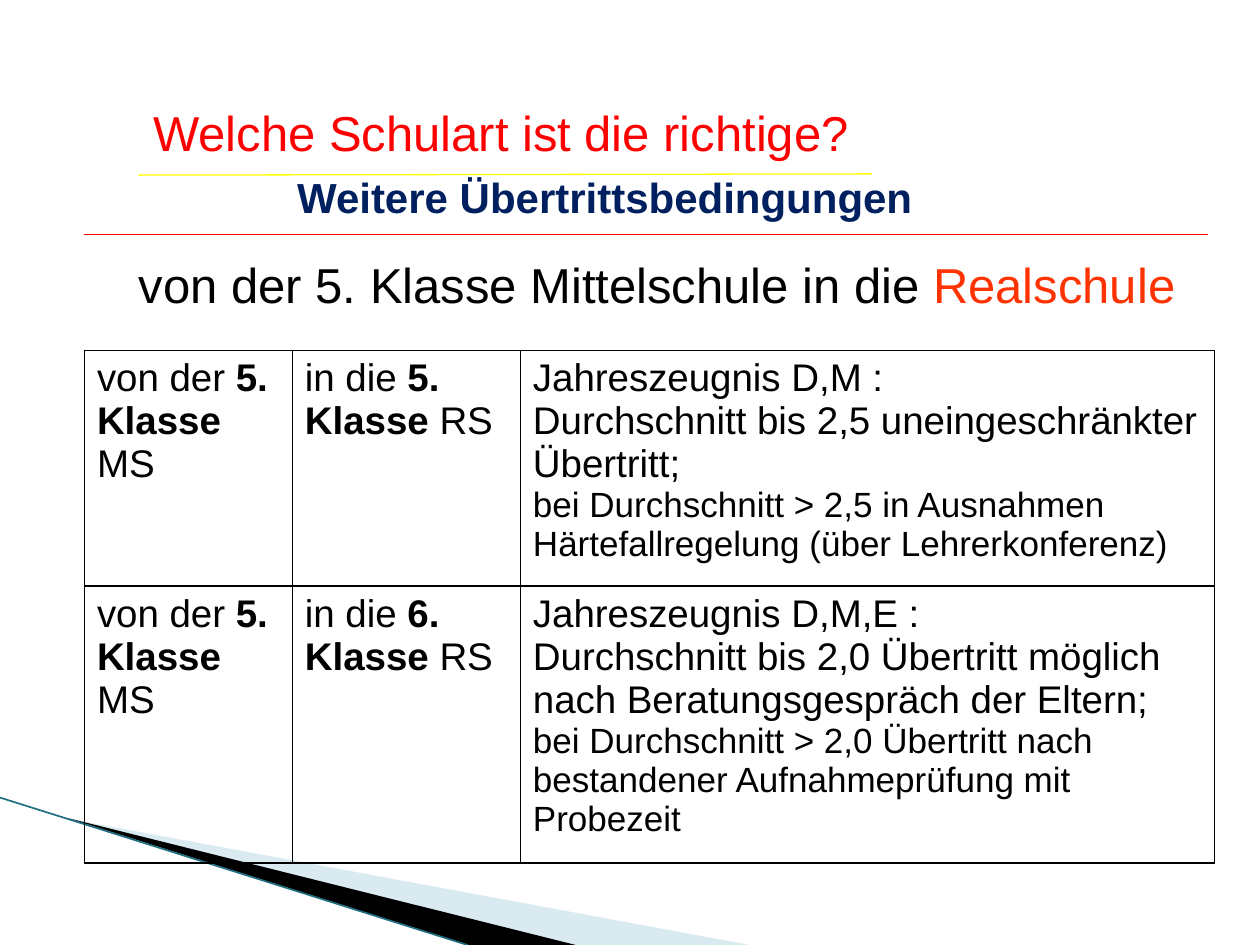
from dataclasses import dataclass

from lxml.etree import SubElement
from pptx import Presentation
from pptx.dml.color import RGBColor
from pptx.enum.shapes import MSO_CONNECTOR
from pptx.enum.text import MSO_ANCHOR, PP_ALIGN
from pptx.oxml import parse_xml
from pptx.oxml.ns import nsdecls, qn
from pptx.util import Inches, Pt


@dataclass(frozen=True)
class Theme:
    font: str = "Arial"
    black: str = "000000"
    red: str = "FF0000"
    orange: str = "FF3300"
    yellow: str = "FFFF00"
    navy: str = "002060"
    pale: str = "A0CBDC"
    teal: str = "1F6F80"
    heading: int = 28
    subheading: int = 24
    body: int = 22
    detail: int = 20


T = Theme()


def add_runs(p, runs, size, color=T.black, bold=False):
    """Each run is a text and a dict of what differs from the defaults."""
    for text, changes in runs:
        r = p.add_run()
        r.text = text
        look = {"name": T.font, "size": size, "bold": bold, "color": color} | changes
        r.font.color.rgb = RGBColor.from_string(look.pop("color"))
        look["size"] = Pt(look["size"])
        for name, value in look.items():
            setattr(r.font, name, value)


def format_heading(sp, box, runs, **look):
    sp.left, sp.top, sp.width, sp.height = map(Inches, box)
    tf = sp.text_frame
    frame = {"word_wrap": True, "vertical_anchor": MSO_ANCHOR.TOP}
    for name, value in frame.items():
        setattr(tf, name, value)
    p = tf.paragraphs[0]
    p.alignment = PP_ALIGN.CENTER
    add_runs(p, runs, **look)


def add_wedge(s, points, color, alpha=None):
    start, *rest = [(Inches(x), Inches(y)) for x, y in points]
    builder = s.shapes.build_freeform(*start)
    builder.add_line_segments(rest, close=True)
    sp = builder.convert_to_shape()
    sp.shadow.inherit = False
    sp.line.fill.background()
    sp.fill.solid()
    sp.fill.fore_color.rgb = RGBColor.from_string(color)
    if alpha is not None:
        clr = sp.fill._xPr.find(".//" + qn("a:srgbClr"))
        SubElement(clr, qn("a:alpha")).set("val", str(alpha * 1000))


def add_rule(s, start, end, color, width=0.75):
    line = s.shapes.add_connector(MSO_CONNECTOR.STRAIGHT, *map(Inches, start + end))
    line.line.color.rgb = RGBColor.from_string(color)
    line.line.width = Pt(width)
    SubElement(line._element.spPr, qn("a:effectLst"))


def set_borders(cell, color, width):
    tc_pr = cell._tc.get_or_add_tcPr()
    for i, side in enumerate(("lnL", "lnR", "lnT", "lnB")):
        tc_pr.insert(i, parse_xml(
            f'<a:{side} {nsdecls("a")} w="{Pt(width)}"><a:solidFill>'
            f'<a:srgbClr val="{color}"/></a:solidFill></a:{side}>'))


def add_grid(s, left, top, widths, heights, rows):
    box = map(Inches, (left, top, sum(widths), sum(heights)))
    table = s.shapes.add_table(len(heights), len(widths), *box).table
    table.first_row = table.horz_banding = False
    for column, width in zip(table.columns, widths):
        column.width = Inches(width)
    for row, height, contents in zip(table.rows, heights, rows):
        row.height = Inches(height)
        for cell, paragraphs in zip(row.cells, contents):
            cell.fill.background()
            set_borders(cell, T.black, 1)
            tf = cell.text_frame
            for i, runs in enumerate(paragraphs):
                p = tf.add_paragraph() if i else tf.paragraphs[0]
                add_runs(p, runs, T.body)


def transfer_row(target, report, rule, exception):
    """From class 5 into a target class, with the conditions."""
    bold = {"bold": True}
    return [
        [[("von der ", {}), ("5. Klasse", bold)], [("MS", {})]],
        [[("in die ", {}), (target, bold), (" RS", {})]],
        [[(report, {})], [(rule, {})], [(exception, {"size": T.detail})]],
    ]


def main():
    prs = Presentation()
    prs.slide_width, prs.slide_height = Inches(10), Inches(7.5)
    s = prs.slides.add_slide(prs.slide_layouts[5])

    # Corner decoration
    add_wedge(s, [(0.55, 6.5), (5.95, 7.5), (4.56, 7.5)], T.pale, 40)
    add_wedge(s, [(0.53, 6.49), (4.57, 7.5), (3.72, 7.5)], T.black)
    add_rule(s, (0, 6.33), (3.71, 7.5), T.teal, 0.95)

    # Headings and rules
    format_heading(s.shapes.title, (0.67, 0.76, 6.61, 0.57),
                   [("Welche Schulart ist die richtige?", {})],
                   size=T.heading, color=T.red)
    add_rule(s, (1.1, 1.39), (6.92, 1.38), T.yellow)
    add_rule(s, (0.67, 1.86), (9.59, 1.86), T.red)
    format_heading(s.shapes.add_textbox(0, 0, 0, 0), (2, 1.31, 5.6, 0.51),
                   [("Weitere Übertrittsbedingungen", {})],
                   size=T.subheading, color=T.navy, bold=True)
    format_heading(s.shapes.add_textbox(0, 0, 0, 0), (0.64, 1.97, 9.15, 0.57),
                   [("von der 5. Klasse Mittelschule in die ", {}),
                    ("Realschule", {"color": T.orange})], size=T.heading)

    # Transfer conditions
    add_grid(s, 0.67, 2.78, (1.65, 1.81, 5.51), (1.87, 2.2), [
        transfer_row("5. Klasse", "Jahreszeugnis D,M :",
                     "Durchschnitt bis 2,5 uneingeschränkter Übertritt;",
                     "bei Durchschnitt > 2,5 in Ausnahmen "
                     "Härtefallregelung (über Lehrerkonferenz)"),
        transfer_row("6. Klasse", "Jahreszeugnis D,M,E :",
                     "Durchschnitt bis 2,0 Übertritt möglich "
                     "nach Beratungsgespräch der Eltern;",
                     "bei Durchschnitt > 2,0 Übertritt nach "
                     "bestandener Aufnahmeprüfung mit Probezeit"),
    ])

    prs.save("out.pptx")


if __name__ == "__main__":
    main()
